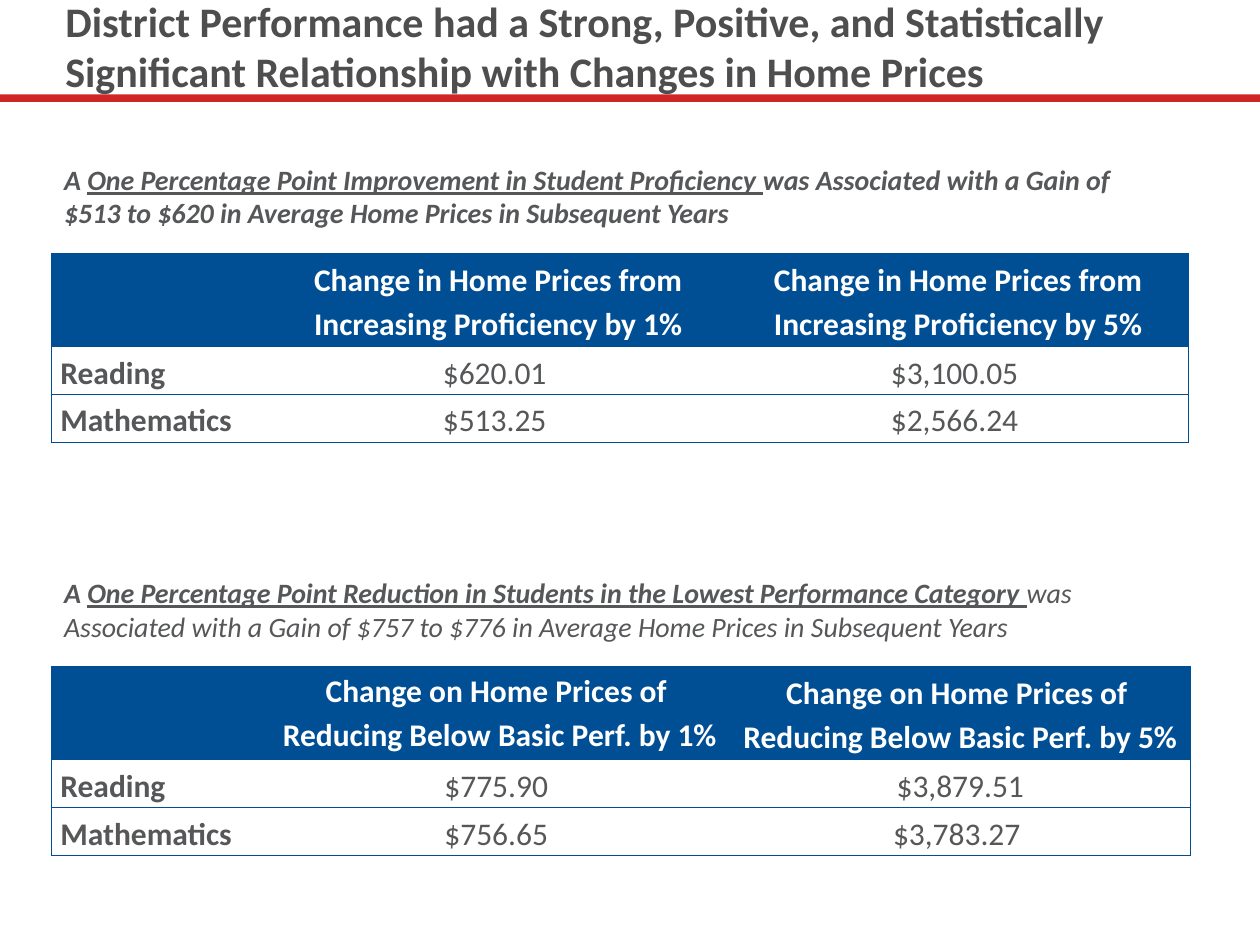
from pptx import Presentation
from pptx.dml.color import RGBColor
from pptx.enum.shapes import MSO_SHAPE
from pptx.enum.text import MSO_ANCHOR, PP_ALIGN
from pptx.oxml import parse_xml
from pptx.oxml.ns import nsdecls
from pptx.util import Inches, Pt

RED = RGBColor(0xD0, 0x25, 0x26)
BLUE = RGBColor(0x00, 0x4F, 0x95)
WHITE = RGBColor(0xFF, 0xFF, 0xFF)
TITLE_GRAY = RGBColor(0x4E, 0x4E, 0x4E)
TEXT_GRAY = RGBColor(0x56, 0x57, 0x59)

ROW_HEIGHTS = (0.74, 0.38, 0.38)

SECTIONS = [
    dict(
        top=1.24,
        width=9.02,
        label_width=1.72,
        lead="One Percentage Point Improvement in Student Proficiency ",
        rest="was Associated with a Gain of $513 to $620 in Average Home Prices "
             "in Subsequent Years",
        rest_bold=True,
        first_anchor=MSO_ANCHOR.MIDDLE,
        rows=[
            ("", "Change in Home Prices from Increasing Proficiency by 1%",
             "Change in Home Prices from Increasing Proficiency by 5%"),
            ("Reading", "$620.01 ", "$3,100.05 "),
            ("Mathematics", "$513.25 ", "$2,566.24 "),
        ],
    ),
    dict(
        top=4.52,
        width=9.04,
        label_width=1.73,
        lead="One Percentage Point Reduction in Students in the Lowest "
             "Performance Category ",
        rest="was Associated with a Gain of $757 to $776 in Average Home Prices "
             "in Subsequent Years",
        rest_bold=False,
        first_anchor=MSO_ANCHOR.TOP,
        rows=[
            ("", "Change on Home Prices of \vReducing Below Basic Perf. by 1%",
             "Change on Home Prices of \vReducing Below Basic Perf. by 5%"),
            ("Reading", "$775.90 ", "$3,879.51"),
            ("Mathematics", "$756.65 ", "$3,783.27 "),
        ],
    ),
]


def style_run(r, size, color, bold):
    r.font.name = "Calibri"
    r.font.size = Pt(size)
    r.font.bold = bold
    r.font.color.rgb = color


def set_borders(cell, sides):
    tc_pr = cell._tc.get_or_add_tcPr()
    for side in "LRTB":
        fill = "<a:noFill/>"
        if side in sides:
            fill = f'<a:solidFill><a:srgbClr val="{BLUE}"/></a:solidFill>'
        tc_pr.append(parse_xml(
            f'<a:ln{side} {nsdecls("a")} w="{Pt(0.75)}">{fill}</a:ln{side}>'))


def add_header(s, left, top, width):
    bar = s.shapes.add_shape(MSO_SHAPE.RECTANGLE, left, top + Inches(0.75),
                             width, Inches(0.06))
    bar.shadow.inherit = False
    bar.fill.solid()
    bar.fill.fore_color.rgb = RED
    bar.line.fill.background()
    title = s.shapes.add_textbox(left + Inches(0.42), top + Inches(0.05),
                                 Inches(9.33), Inches(0.62))
    tf = title.text_frame
    tf.word_wrap = True
    tf.vertical_anchor = MSO_ANCHOR.MIDDLE
    tf.text = ("District Performance had a Strong, Positive, and Statistically "
               "Significant Relationship with Changes in Home Prices")
    style_run(tf.paragraphs[0].runs[0], 24, TITLE_GRAY, True)


def add_caption(s, left, top, section):
    box = s.shapes.add_textbox(left, top, Inches(8.91), Inches(0.64))
    box.text_frame.word_wrap = True
    p = box.text_frame.paragraphs[0]
    parts = [("A ", True, False), (section["lead"], True, True),
             (section["rest"], section["rest_bold"], False)]
    for text, bold, underline in parts:
        r = p.add_run()
        r.text = text
        style_run(r, 16, TEXT_GRAY, bold)
        r.font.italic = True
        r.font.underline = underline


def fill_cell(cell, text, row, col):
    header = row == 0
    cell.margin_left = cell.margin_right = Inches(0.07)
    cell.margin_top = cell.margin_bottom = 0
    cell.vertical_anchor = MSO_ANCHOR.MIDDLE
    set_borders(cell, "TB" + {0: "L", 2: "R"}.get(col, ""))
    if header:
        cell.fill.solid()
        cell.fill.fore_color.rgb = BLUE
    else:
        cell.fill.background()
    cell.text_frame.text = text
    p = cell.text_frame.paragraphs[0]
    p.line_spacing = 1.15
    p.alignment = PP_ALIGN.CENTER if col else PP_ALIGN.LEFT
    for r in p.runs:
        style_run(r, 18, WHITE if header else TEXT_GRAY, header or col == 0)


def add_price_table(s, left, top, section):
    width, label_width = section["width"], section["label_width"]
    table = s.shapes.add_table(3, 3, left, top, Inches(width),
                               Inches(sum(ROW_HEIGHTS))).table
    table.horz_banding = False
    value_width = (width - label_width) / 2
    for col, w in enumerate((label_width, value_width, value_width)):
        table.columns[col].width = Inches(w)
    for row, values in enumerate(section["rows"]):
        table.rows[row].height = Inches(ROW_HEIGHTS[row])
        for col, text in enumerate(values):
            fill_cell(table.cell(row, col), text, row, col)
    table.cell(0, 1).vertical_anchor = section["first_anchor"]


def add_section(s, left, top, section):
    add_caption(s, left, top, section)
    add_price_table(s, left, top + Inches(0.77), section)


def main():
    prs = Presentation()
    prs.slide_width, prs.slide_height = Inches(10), Inches(7.5)
    s = prs.slides.add_slide(prs.slide_layouts[6])
    add_header(s, 0, 0, prs.slide_width)
    for section in SECTIONS:
        add_section(s, Inches(0.41), Inches(section["top"]), section)
    prs.save("out.pptx")


if __name__ == "__main__":
    main()
